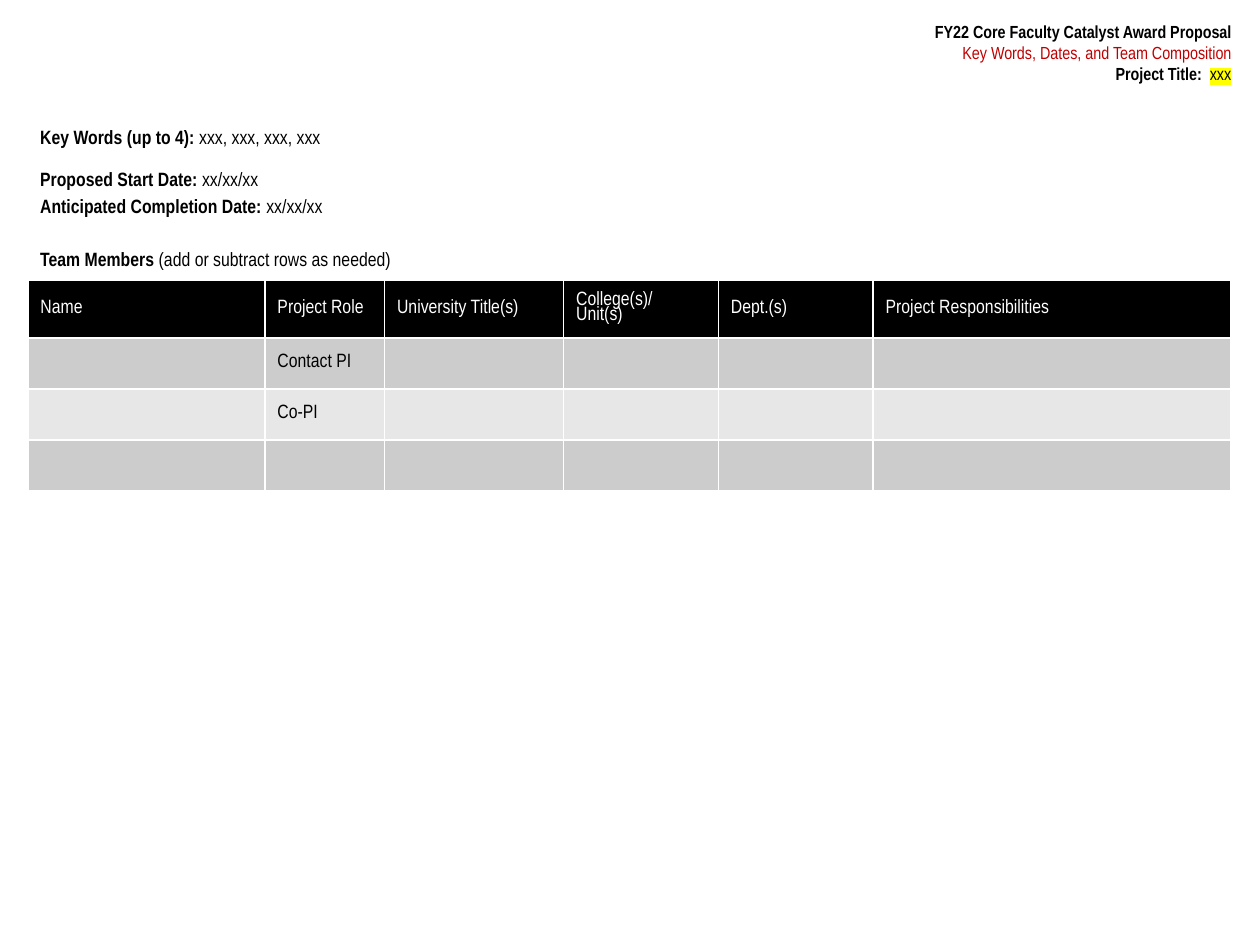
from lxml import etree
from pptx import Presentation
from pptx.dml.color import RGBColor
from pptx.enum.text import MSO_ANCHOR, MSO_AUTO_SIZE, PP_ALIGN
from pptx.oxml.ns import qn
from pptx.util import Cm, Pt

COLORS = {"black": "000000", "white": "FFFFFF", "red": "C00000",
          "yellow": "FFFF00", "dark_band": "CCCCCC", "light_band": "E7E7E7"}
FONT = "Arial Narrow"


def rgb(name):
    return RGBColor.from_string(COLORS[name])


def add_runs(p, runs, size, color="black"):
    p.font.name = FONT
    p.font.size = Pt(size)
    p.font.color.rgb = rgb(color)
    for text, bold in runs:
        r = p.add_run()
        r.text = text
        r.font.bold = bold
    return p


prs = Presentation()
prs.slide_width, prs.slide_height = Cm(25.4), Cm(19.05)
s = prs.slides.add_slide(prs.slide_layouts[5])

title = s.shapes.title
title.left, title.top, title.width, title.height = Cm(8.03), Cm(0.43), Cm(16.79), Cm(1.27)
tf = title.text_frame
tf.word_wrap = True
tf.auto_size = MSO_AUTO_SIZE.NONE
tf.vertical_anchor = MSO_ANCHOR.TOP
tf.margin_left = Cm(0.25)
tf.margin_top = tf.margin_right = tf.margin_bottom = 0
heading = [
    ([("FY22 Core Faculty Catalyst Award Proposal", True)], "black"),
    ([("Key Words, Dates, and Team Composition", False)], "red"),
    ([("Project Title:  ", True), ("xxx", False)], "black"),
]
for i, (runs, color) in enumerate(heading):
    p = tf.add_paragraph() if i else tf.paragraphs[0]
    add_runs(p, runs, 10, color).alignment = PP_ALIGN.RIGHT

r = p.runs[-1]
r.font.color.rgb = rgb("black")
highlight = etree.Element(qn("a:highlight"))
etree.SubElement(highlight, qn("a:srgbClr"), val=COLORS["yellow"])
r.font._element.find(qn("a:solidFill")).addnext(highlight)

details = s.shapes.add_textbox(Cm(0.56), Cm(2.41), Cm(11.53), Cm(3.2))
tf = details.text_frame
tf.word_wrap = True
fields = [
    ("Key Words (up to 4): ", "xxx, xxx, xxx, xxx", 0),
    ("Proposed Start Date: ", "xx/xx/xx", 12.6),
    ("Anticipated Completion Date: ", "xx/xx/xx", 0),
    ("Team Members ", "(add or subtract rows as needed)", 15.2),
]
for i, (label, value, before) in enumerate(fields):
    p = tf.add_paragraph() if i else tf.paragraphs[0]
    add_runs(p, [(label, True), (value, False)], 11)
    if i:
        p.space_before = Pt(before)
        p.line_spacing = Pt(11.2)
        p.space_after = Pt(4)

headers = ["Name", "Project Role", "University Title(s)", "College(s)/\vUnit(s)",
           "Dept.(s)", "Project Responsibilities"]
roles = ["Contact PI", "Co-PI", ""]
rows = [headers] + [["", role, "", "", "", ""] for role in roles]
bands = ["black", "dark_band", "light_band", "dark_band"]
widths = [4.78, 2.41, 3.61, 3.12, 3.12, 7.21]
heights = [1.17, 1.03, 1.03, 1.03]

table = s.shapes.add_table(len(rows), len(headers), Cm(0.56), Cm(5.64),
                           Cm(sum(widths)), Cm(sum(heights))).table
for column, width in zip(table.columns, widths):
    column.width = Cm(width)
for i, (row, values) in enumerate(zip(table.rows, rows)):
    row.height = Cm(heights[i])
    for cell, value in zip(row.cells, values):
        cell.fill.solid()
        cell.fill.fore_color.rgb = rgb(bands[i])
        cell.vertical_anchor = MSO_ANCHOR.MIDDLE
        cell.text = value
        p = cell.text_frame.paragraphs[0]
        p.line_spacing = 0.8
        p.font.name = FONT
        p.font.size = Pt(11)
        p.font.bold = False
        p.font.color.rgb = rgb("black" if i else "white")

prs.save("out.pptx")
